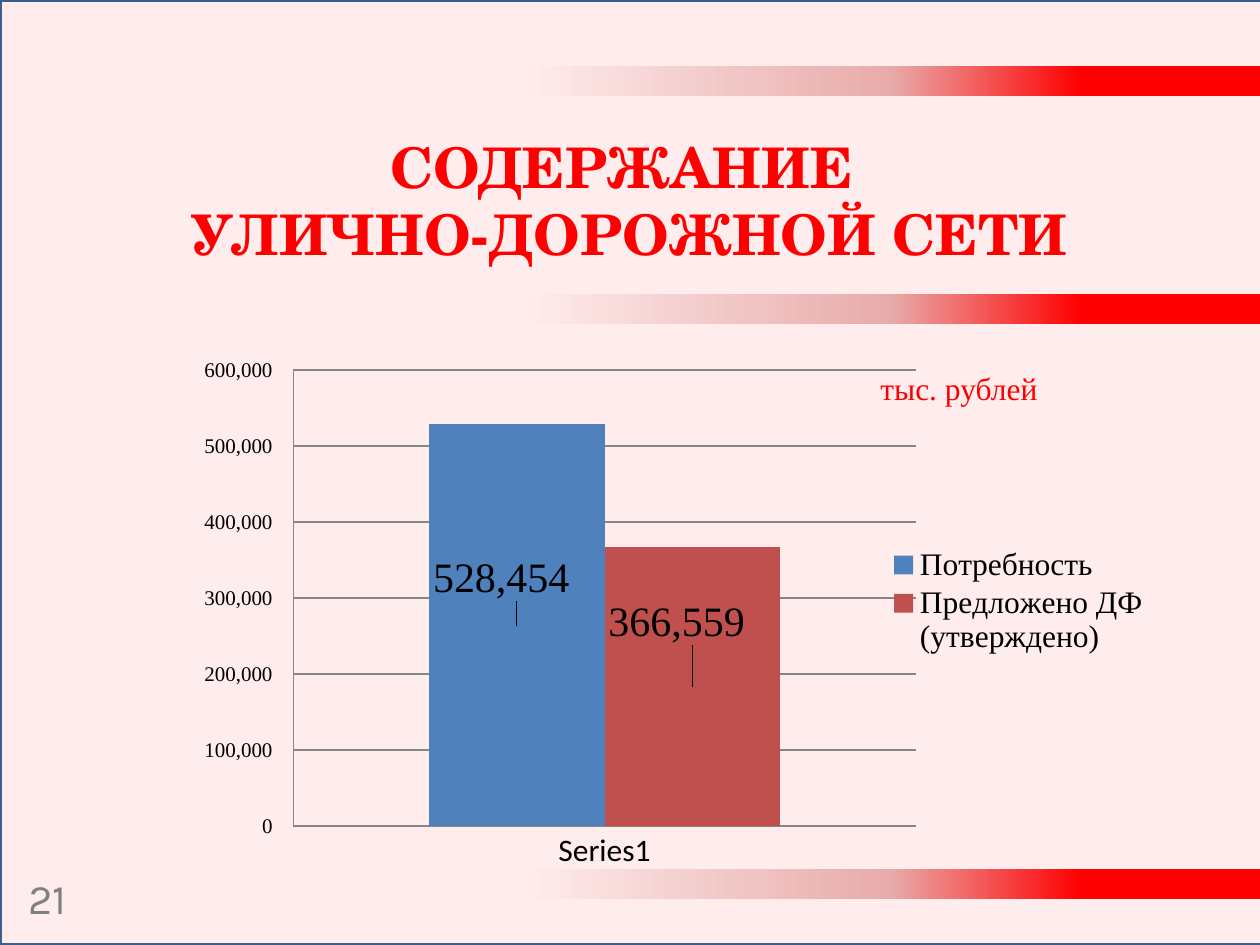
import copy

import lxml.etree
import pptx
import pptx.chart.data
import pptx.dml.color
import pptx.enum.chart
import pptx.enum.shapes
import pptx.enum.text
import pptx.oxml
import pptx.oxml.ns
import pptx.util

EMU_PER_PX = 914400 / 126
RED = pptx.dml.color.RGBColor(0xFF, 0x00, 0x00)
PINK = pptx.dml.color.RGBColor(0xE6, 0xB9, 0xB8)
WHITE = pptx.dml.color.RGBColor(0xFF, 0xFF, 0xFF)
BLACK = pptx.dml.color.RGBColor(0x00, 0x00, 0x00)
GRAY = pptx.dml.color.RGBColor(0x80, 0x80, 0x80)
GRID_GRAY = pptx.dml.color.RGBColor(0x86, 0x86, 0x86)
FRAME_BLUE = pptx.dml.color.RGBColor(0x3A, 0x5F, 0x8C)
NEED_BLUE = pptx.dml.color.RGBColor(0x4F, 0x81, 0xBD)
APPROVED_RED = pptx.dml.color.RGBColor(0xC0, 0x50, 0x4D)
SERIF = "Times New Roman"

# Name, value, colour, label offset from the bar centre
SERIES = [
    ("Потребность", 528454, NEED_BLUE, (-0.016, -0.09)),
    ("Предложено ДФ (утверждено)", 366559, APPROVED_RED, (-0.016, -0.125)),
]


def px(length):
    return pptx.util.Emu(round(length * EMU_PER_PX))


def emu_box(box):
    return [px(length) for length in box]


def format_font(font, name, size, color, bold=False):
    values = {"name": name, "size": pptx.util.Pt(size), "bold": bold}
    for attribute, value in values.items():
        setattr(font, attribute, value)
    font.color.rgb = color


def add_rectangle(slide, box):
    shape = slide.shapes.add_shape(
        pptx.enum.shapes.MSO_SHAPE.RECTANGLE, *emu_box(box))
    shape.shadow.inherit = False
    return shape


def add_gradient_band(slide, box):
    band = add_rectangle(slide, box)
    band.line.fill.background()
    band.fill.gradient()
    band.fill.gradient_angle = 180
    stop_list = band.element.spPr.find(".//" + pptx.oxml.ns.qn("a:gsLst"))
    stop_list.append(copy.deepcopy(stop_list[0]))
    stops = [(0.24, RED), (0.5, PINK), (1, WHITE)]
    for stop, (position, color) in zip(band.fill.gradient_stops, stops):
        stop.position = position
        stop.color.rgb = color


def add_page_tint(slide, box):
    tint = add_rectangle(slide, box)
    tint.fill.solid()
    tint.fill.fore_color.rgb = RED
    color = tint.element.spPr.find(".//" + pptx.oxml.ns.qn("a:srgbClr"))
    lxml.etree.SubElement(color, pptx.oxml.ns.qn("a:alpha"), val="7000")
    tint.line.color.rgb = FRAME_BLUE
    tint.line.width = pptx.util.Pt(2)


def place_title(slide, box, lines):
    title = slide.shapes.title
    for side, length in zip(("left", "top", "width", "height"), emu_box(box)):
        setattr(title, side, length)
    frame = title.text_frame
    frame.text = "\n".join(lines)
    frame.vertical_anchor = pptx.enum.text.MSO_ANCHOR.TOP
    for paragraph in frame.paragraphs:
        paragraph.alignment = pptx.enum.text.PP_ALIGN.CENTER
        format_font(paragraph.runs[0].font, "TeX Gyre Schola", 32, RED, True)


def add_text(slide, box, text, font_name, size, color, wrap):
    frame = slide.shapes.add_textbox(*emu_box(box)).text_frame
    frame.word_wrap = wrap
    frame.text = text
    format_font(frame.paragraphs[0].runs[0].font, font_name, size, color)


def insert_layout(parent, index, **settings):
    """Put a manual chart layout into parent at the given child index."""
    for old in parent.findall(pptx.oxml.ns.qn("c:layout")):
        parent.remove(old)
    layout = pptx.oxml.parse_xml(
        f'<c:layout {pptx.oxml.ns.nsdecls("c")}><c:manualLayout/></c:layout>')
    for name, value in settings.items():
        lxml.etree.SubElement(
            layout[0], pptx.oxml.ns.qn(f"c:{name}"), val=str(value))
    parent.insert(index, layout)


def format_axes(chart):
    for axis in (chart.category_axis, chart.value_axis):
        axis.major_tick_mark = pptx.enum.chart.XL_TICK_MARK.NONE
        axis.minor_tick_mark = pptx.enum.chart.XL_TICK_MARK.NONE
        axis.format.line.color.rgb = GRID_GRAY
    value_axis = chart.value_axis
    value_axis.minimum_scale = 0
    value_axis.maximum_scale = 600000
    value_axis.major_unit = 100000
    value_axis.major_gridlines.format.line.color.rgb = GRID_GRAY
    value_axis.tick_labels.number_format = "#,##0_р_."
    value_axis.tick_labels.number_format_is_linked = False
    format_font(value_axis.tick_labels.font, SERIF, 12, BLACK)


def format_legend(chart):
    chart.has_legend = True
    legend = chart.legend
    legend.position = pptx.enum.chart.XL_LEGEND_POSITION.RIGHT
    legend.include_in_layout = False
    format_font(legend.font, SERIF, 18, BLACK)
    element = chart.element.find(".//" + pptx.oxml.ns.qn("c:legend"))
    insert_layout(element, 1, xMode="edge", yMode="edge",
                  x=0.72, y=0.38, w=0.27, h=0.22)


def add_needs_chart(slide, box):
    data = pptx.chart.data.CategoryChartData(number_format="#,##0")
    data.categories = ["Series1"]
    for name, value, _, _ in SERIES:
        data.add_series(name, [value])
    chart = slide.shapes.add_chart(
        pptx.enum.chart.XL_CHART_TYPE.COLUMN_CLUSTERED,
        *emu_box(box), data).chart
    chart.has_title = False
    format_font(chart.font, "Calibri", 18, BLACK)
    plot = chart.plots[0]
    plot.vary_by_categories = False
    plot.gap_width = 155
    plot.overlap = 0
    for series, (_, _, color, (dx, dy)) in zip(plot.series, SERIES):
        series.format.fill.solid()
        series.format.fill.fore_color.rgb = color
        label = series.points[0].data_label
        label.position = pptx.enum.chart.XL_LABEL_POSITION.CENTER
        format_font(label.font, SERIF, 24, BLACK)
        element = chart.element.findall(".//" + pptx.oxml.ns.qn("c:dLbl"))[-1]
        insert_layout(element, 1, x=dx, y=dy)
    format_axes(chart)
    format_legend(chart)
    plot_area = chart.element.find(".//" + pptx.oxml.ns.qn("c:plotArea"))
    insert_layout(plot_area, 0, layoutTarget="inner", xMode="edge",
                  yMode="edge", x=0.112, y=0.046, w=0.638, h=0.876)


def build_slide(presentation):
    slide = presentation.slides.add_slide(presentation.slide_layouts[5])
    for top in (66, 294, 869):
        add_gradient_band(slide, (520, top, 740, 30))
    add_page_tint(slide, (0, 0, 1262, 945))
    place_title(slide, (0, 126, 1260, 149),
                ["СОДЕРЖАНИЕ ", "УЛИЧНО-ДОРОЖНОЙ СЕТИ"])
    add_text(slide, (16, 866, 78, 63), "21", "Karla", 24, GRAY, True)
    add_needs_chart(slide, (184, 346, 976, 523))
    add_text(slide, (868, 363, 184, 50), "тыс. рублей", SERIF, 18, RED, False)


def main():
    presentation = pptx.Presentation()
    presentation.slide_width = px(1260)
    presentation.slide_height = px(945)
    build_slide(presentation)
    presentation.save("out.pptx")


if __name__ == "__main__":
    main()
